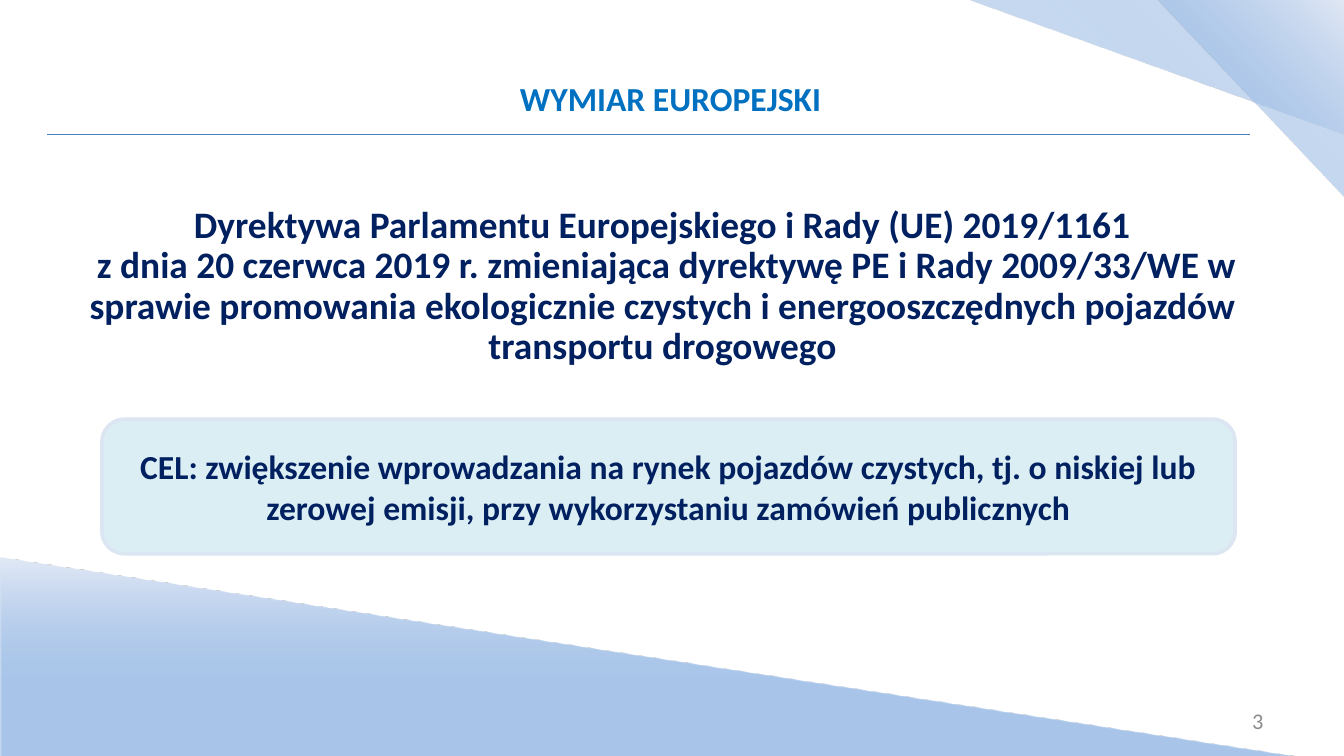
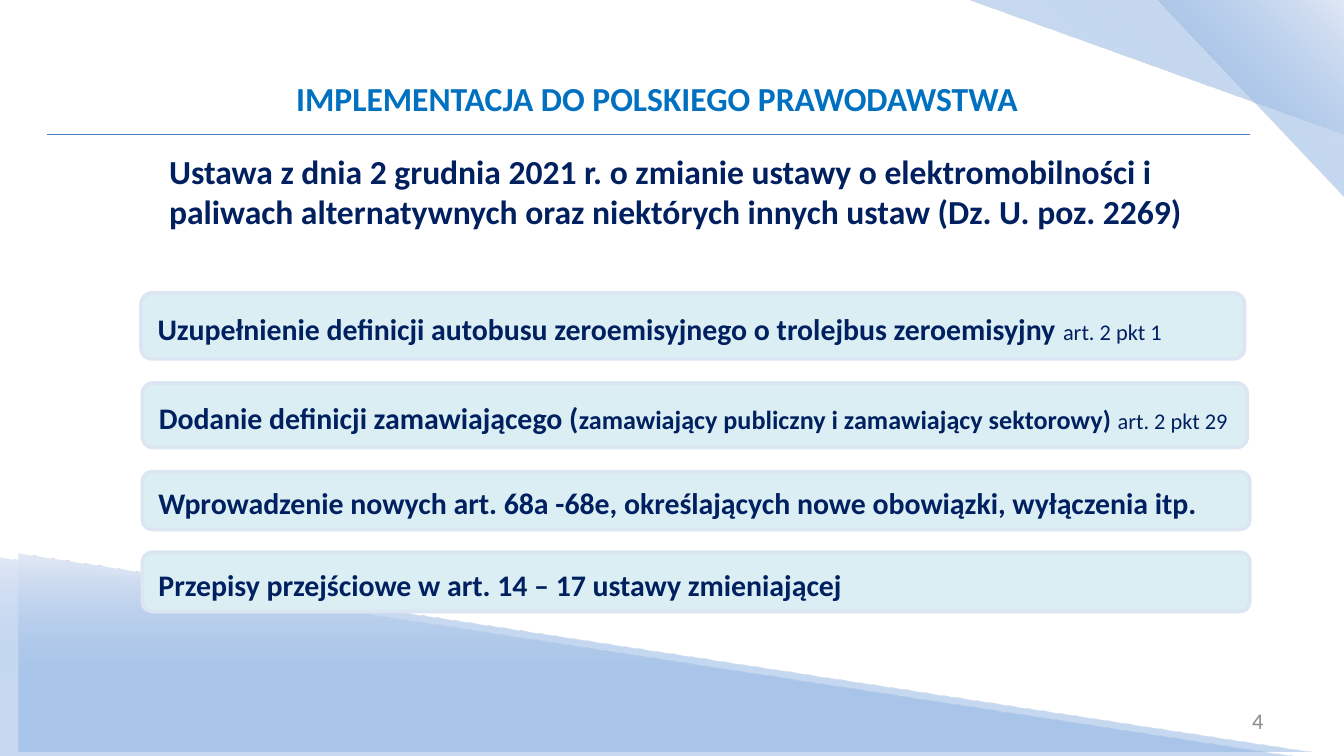
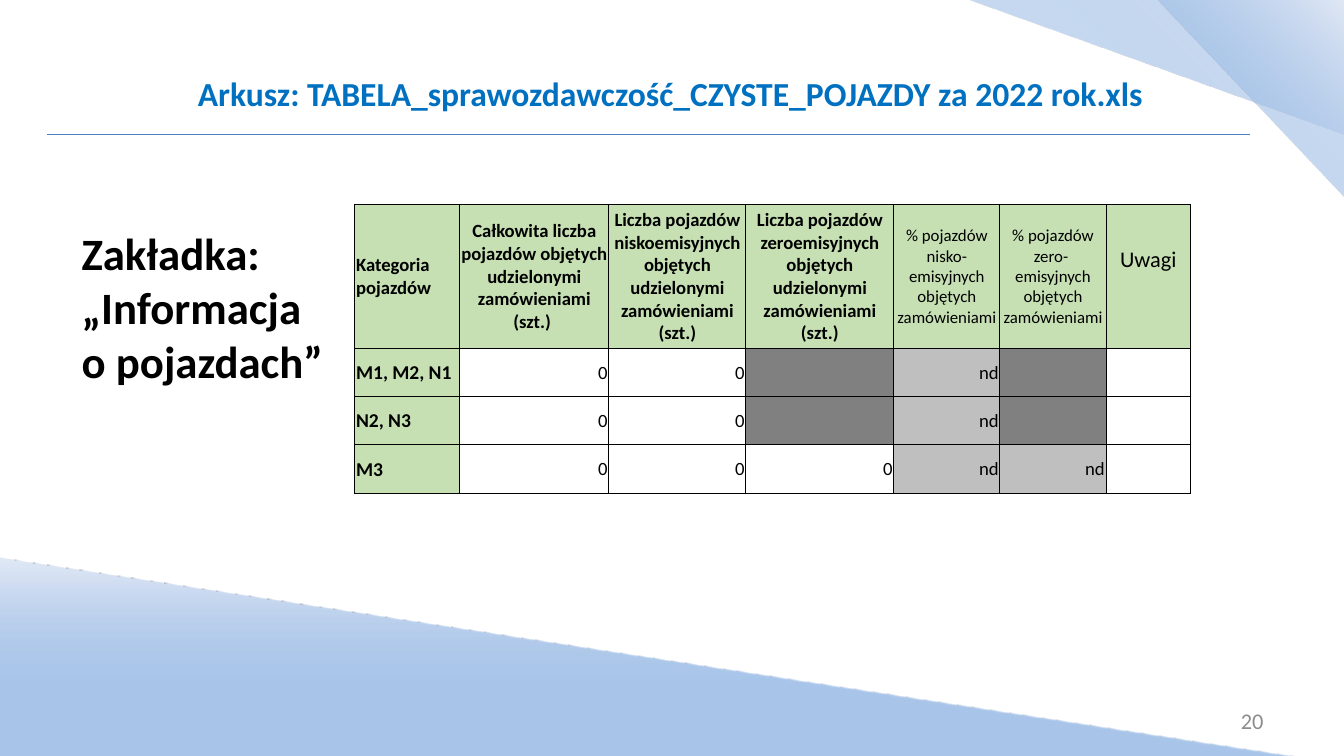
from lxml import etree
from pptx import Presentation
from pptx.dml.color import RGBColor
from pptx.enum.shapes import MSO_CONNECTOR, MSO_SHAPE
from pptx.enum.text import MSO_ANCHOR, MSO_AUTO_SIZE, PP_ALIGN
from pptx.oxml.ns import qn
from pptx.util import Inches, Pt

LEFT, CENTER, RIGHT = PP_ALIGN.LEFT, PP_ALIGN.CENTER, PP_ALIGN.RIGHT
TOP, MIDDLE = MSO_ANCHOR.TOP, MSO_ANCHOR.MIDDLE
TRIANGLE, ROUNDED = MSO_SHAPE.RIGHT_TRIANGLE, MSO_SHAPE.ROUNDED_RECTANGLE

# Shared style
FONT = "Calibri"
TITLE_BLUE, NAVY, BLACK = "0070C0", "002060", "000000"
RULE_BLUE, NUMBER_GRAY = "4B7EBC", "8C8C8C"
WEDGE_BLUE, WEDGE_LIGHT = "8EB4E3", "E1E8F5"
BOX_FILL, BOX_LINE = "DBEEF4", "DCE6F2"
GREEN, DARK_GRAY, LIGHT_GRAY = "C6E0B4", "808080", "BFBFBF"
BODY_SPACING = 21.6


def color(hex_value):
    return RGBColor.from_string(hex_value)


# Text
def add_run(paragraph, text, size, hex_value, bold=False):
    run = paragraph.add_run()
    run.text = text
    run.font.name = FONT
    run.font.size = Pt(size)
    run.font.bold = bold
    run.font.color.rgb = color(hex_value)


def add_paragraph(frame, runs, hex_value, align=LEFT, spacing=None, before=0, after=0):
    """Write runs, given as (text, size, bold), into a new paragraph."""
    first = frame.paragraphs[0]
    paragraph = frame.add_paragraph() if first.runs else first
    paragraph.alignment = align
    paragraph.space_before, paragraph.space_after = Pt(before), Pt(after)
    if spacing:
        paragraph.line_spacing = Pt(spacing)
    for text, size, bold in runs:
        add_run(paragraph, text, size, hex_value, bold)


def add_text_frame(slide, left, top, width, height, grow=True):
    box = slide.shapes.add_textbox(Inches(left), Inches(top), Inches(width), Inches(height))
    frame = box.text_frame
    frame.word_wrap = True
    frame.auto_size = MSO_AUTO_SIZE.SHAPE_TO_FIT_TEXT if grow else MSO_AUTO_SIZE.NONE
    return frame


# Shapes
def add_shape(slide, kind, left, top, width, height):
    shape = slide.shapes.add_shape(kind, Inches(left), Inches(top), Inches(width), Inches(height))
    shape.shadow.inherit = False
    return shape


def add_wedge(slide, left, top, width, height, angle, rotation=0):
    wedge = add_shape(slide, TRIANGLE, left, top, width, height)
    wedge.rotation = rotation
    wedge.line.fill.background()
    wedge.fill.gradient()
    wedge.fill.gradient_angle = angle
    stops = wedge.fill.gradient_stops
    for stop, position, hex_value in zip(stops, (0.39, 1), (WEDGE_BLUE, WEDGE_LIGHT)):
        stop.position = position
        stop.color.rgb = color(hex_value)
    blue = wedge.element.spPr.find(".//" + qn("a:srgbClr"))
    etree.SubElement(blue, qn("a:alpha"), val="50000")


def add_rounded_box(slide, place, runs, align=LEFT, space=0):
    box = add_shape(slide, ROUNDED, *place)
    box.fill.solid()
    box.fill.fore_color.rgb = color(BOX_FILL)
    box.line.color.rgb = color(BOX_LINE)
    box.line.width = Pt(2)
    frame = box.text_frame
    frame.word_wrap = True
    frame.vertical_anchor = MIDDLE
    add_paragraph(frame, runs, NAVY, align, BODY_SPACING, space, space)


def add_title_rule(slide):
    rule = slide.shapes.add_connector(
        MSO_CONNECTOR.STRAIGHT, Inches(0.35), Inches(1), Inches(9.3), Inches(1))
    rule.line.color.rgb = color(RULE_BLUE)
    rule.line.width = Pt(0.75)
    etree.SubElement(rule.element.spPr, qn("a:effectLst"))


def add_base_slide(presentation, title, title_place, number, front_wedge):
    """Add a slide with the corner wedges, title, rule and page number."""
    slide = presentation.slides.add_slide(presentation.slide_layouts[6])
    add_wedge(slide, 7.2, 0, 2.81, 1, 225, 180)
    add_wedge(slide, 8.61, 0, 1.39, 1.47, 225, 180)
    for left, top in ((0, 4.15), front_wedge):
        add_wedge(slide, left, top, 9.63, 1.47, 90)
    frame = add_text_frame(slide, *title_place)
    add_paragraph(frame, [(title, 18, True)], TITLE_BLUE, CENTER, 24, before=6)
    add_title_rule(slide)
    frame = add_text_frame(slide, 7.17, 5.21, 2.33, 0.3, grow=False)
    frame.vertical_anchor = MIDDLE
    add_paragraph(frame, [(number, 12, False)], NUMBER_GRAY, RIGHT)
    return slide


# Table
def add_cell_borders(cell):
    properties = cell._tc.get_or_add_tcPr()
    for side in ("a:lnL", "a:lnR", "a:lnT", "a:lnB"):
        border = etree.SubElement(properties, qn(side), w=str(Pt(0.5)))
        fill = etree.SubElement(border, qn("a:solidFill"))
        etree.SubElement(fill, qn("a:srgbClr"), val=BLACK)


def style_cell(cell, fill=None, anchor=MIDDLE, top_margin=0.01):
    add_cell_borders(cell)
    if fill:
        cell.fill.solid()
        cell.fill.fore_color.rgb = color(fill)
    else:
        cell.fill.background()
    cell.margin_left = cell.margin_right = Inches(0.01)
    cell.margin_top, cell.margin_bottom = Inches(top_margin), Inches(0)
    cell.vertical_anchor = anchor


def add_vehicle_table(slide):
    # Each header: paragraphs, size, bold, alignment
    headers = [
        (["Kategoria pojazdów"], 10, True, LEFT),
        (["Całkowita liczba pojazdów objętych udzielonymi zamówieniami (szt.) "],
         10, True, CENTER),
        (["Liczba pojazdów niskoemisyjnych objętych udzielonymi zamówieniami (szt.)"],
         10, True, CENTER),
        (["Liczba pojazdów zeroemisyjnych objętych udzielonymi zamówieniami (szt.)"],
         10, True, CENTER),
        (["% pojazdów nisko-", "emisyjnych", "objętych zamówieniami"], 9, False, CENTER),
        (["% pojazdów zero- ", "emisyjnych objętych zamówieniami"], 9, False, CENTER),
        (["Uwagi"], 12, False, CENTER),
    ]
    # None marks a field that does not apply
    rows = [
        ("M1, M2, N1", "0", "0", None, "nd", None, ""),
        ("N2, N3", "0", "0", None, "nd", None, ""),
        ("M3", "0", "0", "0", "nd", "nd", ""),
    ]
    fills = {None: DARK_GRAY, "nd": LIGHT_GRAY}
    widths = (0.78, 1.11, 1.02, 1.1, 0.79, 0.79, 0.63)
    heights = (1.07, 0.36, 0.36, 0.36)

    table = slide.shapes.add_table(len(heights), len(widths), Inches(2.64), Inches(1.52),
                                   Inches(sum(widths)), Inches(sum(heights))).table
    table.first_row = table.horz_banding = False
    for column, width in zip(table.columns, widths):
        column.width = Inches(width)
    for row, height in zip(table.rows, heights):
        row.height = Inches(height)

    for index, (lines, size, bold, align) in enumerate(headers):
        cell = table.cell(0, index)
        if lines == ["Uwagi"]:
            style_cell(cell, GREEN, TOP, 0.31)
        else:
            style_cell(cell, GREEN)
        for line in lines:
            add_paragraph(cell.text_frame, [(line, size, bold)], BLACK, align)

    for row_index, values in enumerate(rows, start=1):
        for column_index, value in enumerate(values):
            cell = table.cell(row_index, column_index)
            is_category = column_index == 0
            style_cell(cell, GREEN if is_category else fills.get(value))
            if value:
                size, align = (10.5, LEFT) if is_category else (10, RIGHT)
                add_paragraph(cell.text_frame, [(value, size, is_category)], BLACK, align)


# Slides
def add_european_slide(presentation):
    slide = add_base_slide(presentation, "WYMIAR EUROPEJSKI", (0.71, 0.5, 8.56, 0.42),
                           "3", (0.01, 4.15))
    frame = add_text_frame(slide, 0.55, 1.48, 8.76, 2.11)
    add_paragraph(frame, [("Dyrektywa Parlamentu Europejskiego i Rady (UE) 2019/1161", 20, True)],
                  NAVY, CENTER, BODY_SPACING, before=6)
    add_paragraph(frame, [(
        " z dnia 20 czerwca 2019 r. zmieniająca dyrektywę PE i Rady 2009/33/WE w sprawie "
        "promowania ekologicznie czystych i energooszczędnych pojazdów transportu drogowego",
        20, True)], NAVY, CENTER, BODY_SPACING, after=6)
    add_rounded_box(slide, (0.76, 3.12, 8.43, 1), [(
        "CEL: zwiększenie wprowadzania na rynek pojazdów czystych, tj. o niskiej lub "
        "zerowej emisji, przy wykorzystaniu zamówień publicznych", 18, True)], CENTER, 6)


def add_implementation_slide(presentation):
    slide = add_base_slide(presentation, "IMPLEMENTACJA DO POLSKIEGO PRAWODAWSTWA",
                           (0.61, 0.5, 8.56, 0.86), "4", (0.14, 4.12))
    frame = add_text_frame(slide, 1.16, 0.69, 7.95, 2.99)
    frame.margin_top = Inches(0.43)
    add_paragraph(frame, [(
        "Ustawa z dnia 2 grudnia 2021 r. o zmianie ustawy o elektromobilności i paliwach "
        "alternatywnych oraz niektórych innych ustaw (Dz. U. poz. 2269)", 18, True)],
        NAVY, LEFT, BODY_SPACING, after=6)
    changes = [
        ((1.05, 2.18, 8.21, 0.49), [
            ("Uzupełnienie definicji autobusu zeroemisyjnego o trolejbus zeroemisyjny ", 16, True),
            ("art. 2 pkt 1", 12, False)]),
        ((1.06, 2.85, 8.22, 0.48), [
            ("Dodanie definicji zamawiającego (", 16, True),
            ("zamawiający publiczny i zamawiający sektorowy) ", 14, True),
            ("art. 2 pkt 29", 12, False)]),
        ((1.06, 3.51, 8.24, 0.43), [
            ("Wprowadzenie nowych art. 68a -68e, określających nowe obowiązki, "
             "wyłączenia itp.", 16, True)]),
        ((1.06, 4.11, 8.24, 0.44), [
            ("Przepisy przejściowe w art. 14 – 17 ustawy zmieniającej", 16, True)]),
    ]
    for place, runs in changes:
        add_rounded_box(slide, place, runs)


def add_report_slide(presentation):
    slide = add_base_slide(presentation,
                           "Arkusz: TABELA_sprawozdawczość_CZYSTE_POJAZDY za 2022 rok.xls",
                           (0.71, 0.46, 8.56, 0.86), "20", (0, 4.16))
    frame = add_text_frame(slide, 0.51, 1.63, 2.13, 1.31)
    for line in ("Zakładka:", "„Informacja", "o pojazdach”"):
        add_paragraph(frame, [(line, 24, True)], BLACK)
    add_vehicle_table(slide)


def main():
    presentation = Presentation()
    # Widescreen, 16:9
    presentation.slide_width = Inches(10)
    presentation.slide_height = Inches(10) * 9 // 16
    add_european_slide(presentation)
    add_implementation_slide(presentation)
    add_report_slide(presentation)
    presentation.save("out.pptx")


if __name__ == "__main__":
    main()
